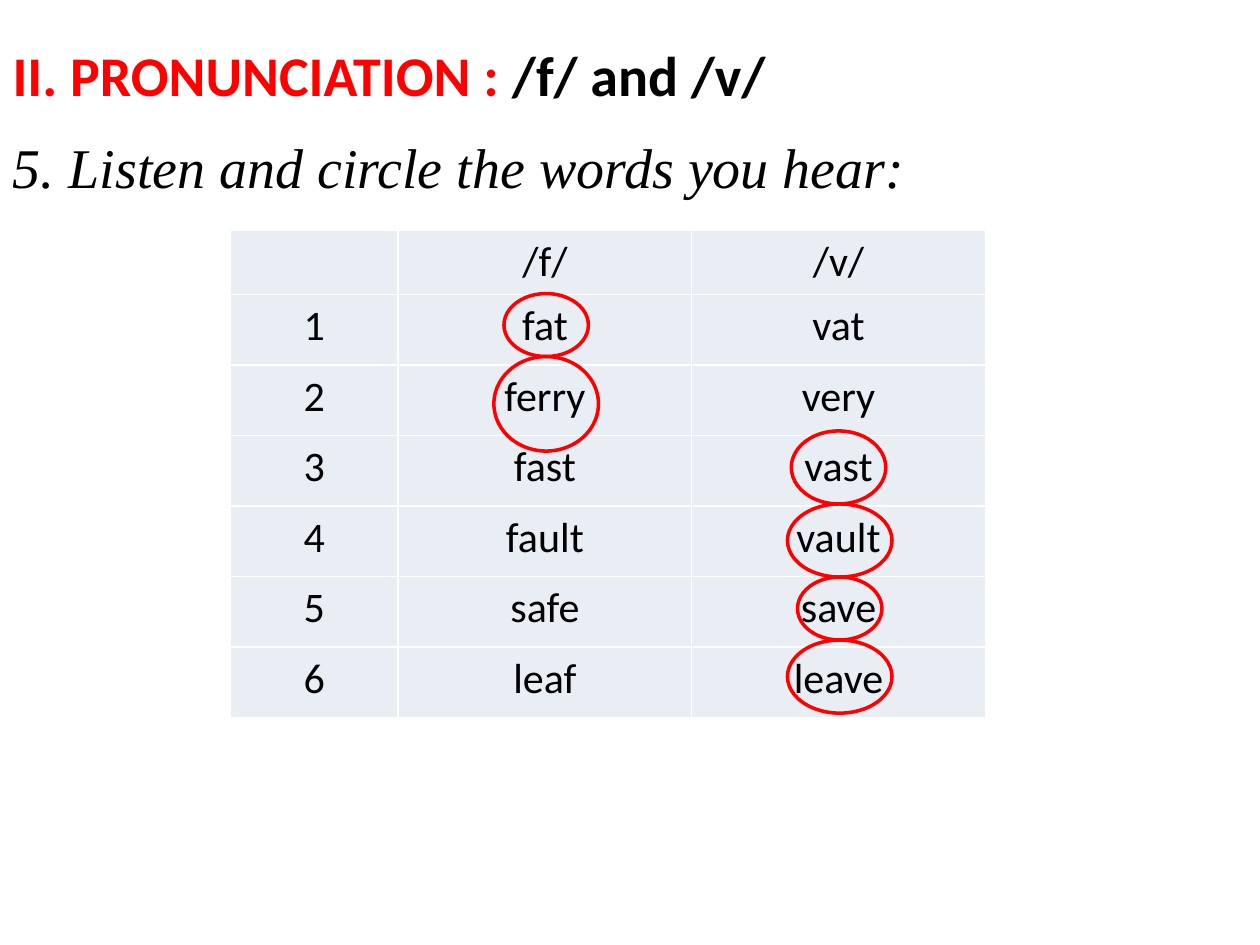
from pptx import Presentation
from pptx.dml.color import RGBColor
from pptx.enum.shapes import MSO_SHAPE
from pptx.enum.text import MSO_ANCHOR, PP_ALIGN
from pptx.oxml.xmlchemy import OxmlElement
from pptx.util import Inches, Pt

RED = RGBColor(0xFF, 0x00, 0x00)
BLACK = RGBColor(0x00, 0x00, 0x00)
CELL_FILL = RGBColor(0xE9, 0xED, 0xF4)


def add_run(paragraph, text, color, **formats):
    run = paragraph.add_run()
    run.text = text
    run.font.color.rgb = color
    for name, value in formats.items():
        setattr(run.font, name, value)


def place(shape, left, top, width, height):
    box = {"left": left, "top": top, "width": width, "height": height}
    for name, value in box.items():
        setattr(shape, name, Inches(value))


presentation = Presentation()
presentation.slide_width = Inches(10)
presentation.slide_height = Inches(7.5)
slide = presentation.slides.add_slide(presentation.slide_layouts[1])

# Title
title = slide.shapes.title
place(title, 0, 0, 9, 1.17)
title.text_frame.vertical_anchor = MSO_ANCHOR.MIDDLE
paragraph = title.text_frame.paragraphs[0]
paragraph.alignment = PP_ALIGN.LEFT
heading = {"name": "Calibri", "size": Pt(32), "bold": True}
add_run(paragraph, "II. PRONUNCIATION : ", RED, **heading)
add_run(paragraph, "/f/ and /v/", BLACK, **heading)

# Instruction
body = slide.placeholders[1]
place(body, 0, 1, 10, 5.7)
paragraph = body.text_frame.paragraphs[0]
properties = paragraph._p.get_or_add_pPr()
properties.set("marL", str(Inches(0.56)))
properties.set("indent", str(-Inches(0.56)))
properties.append(OxmlElement("a:buNone"))
add_run(paragraph, "5. Listen and circle the words you hear:", BLACK,
        name="Times New Roman", size=Pt(32), italic=True)

# Word table
rows = [
    ("", "/f/", "/v/"),
    ("1", "fat", "vat"),
    ("2", "ferry", "very"),
    ("3", "fast", "vast"),
    ("4", "fault", "vault"),
    ("5", "safe", "save"),
    ("6", "leaf", "leave"),
]
table = slide.shapes.add_table(len(rows), 3, Inches(1.83), Inches(1.83),
                               Inches(6), Inches(3.86)).table
table.first_row = False
table.horz_banding = False
for column, width in zip(table.columns, (1.33, 2.33, 2.33)):
    column.width = Inches(width)
for row_index, words in enumerate(rows):
    table.rows[row_index].height = Inches(0.56 if row_index else 0.48)
    for column_index, word in enumerate(words):
        cell = table.cell(row_index, column_index)
        cell.fill.solid()
        cell.fill.fore_color.rgb = CELL_FILL
        if word:
            paragraph = cell.text_frame.paragraphs[0]
            paragraph.alignment = PP_ALIGN.CENTER
            add_run(paragraph, word, BLACK, name="Calibri", size=Pt(24))

# Circles around the words heard: left, top, width, height
circles = [
    (4, 2.33, 0.67, 0.5),
    (3.92, 2.83, 0.83, 0.75),
    (6.28, 3.42, 0.75, 0.58),
    (6.25, 4, 0.83, 0.58),
    (6.33, 4.58, 0.67, 0.5),
    (6.25, 5.08, 0.83, 0.58),
]
for box in circles:
    circle = slide.shapes.add_shape(MSO_SHAPE.OVAL, *map(Inches, box))
    circle.shadow.inherit = False
    circle.fill.background()
    circle.line.color.rgb = RED
    circle.line.width = Pt(2)

presentation.save("out.pptx")
